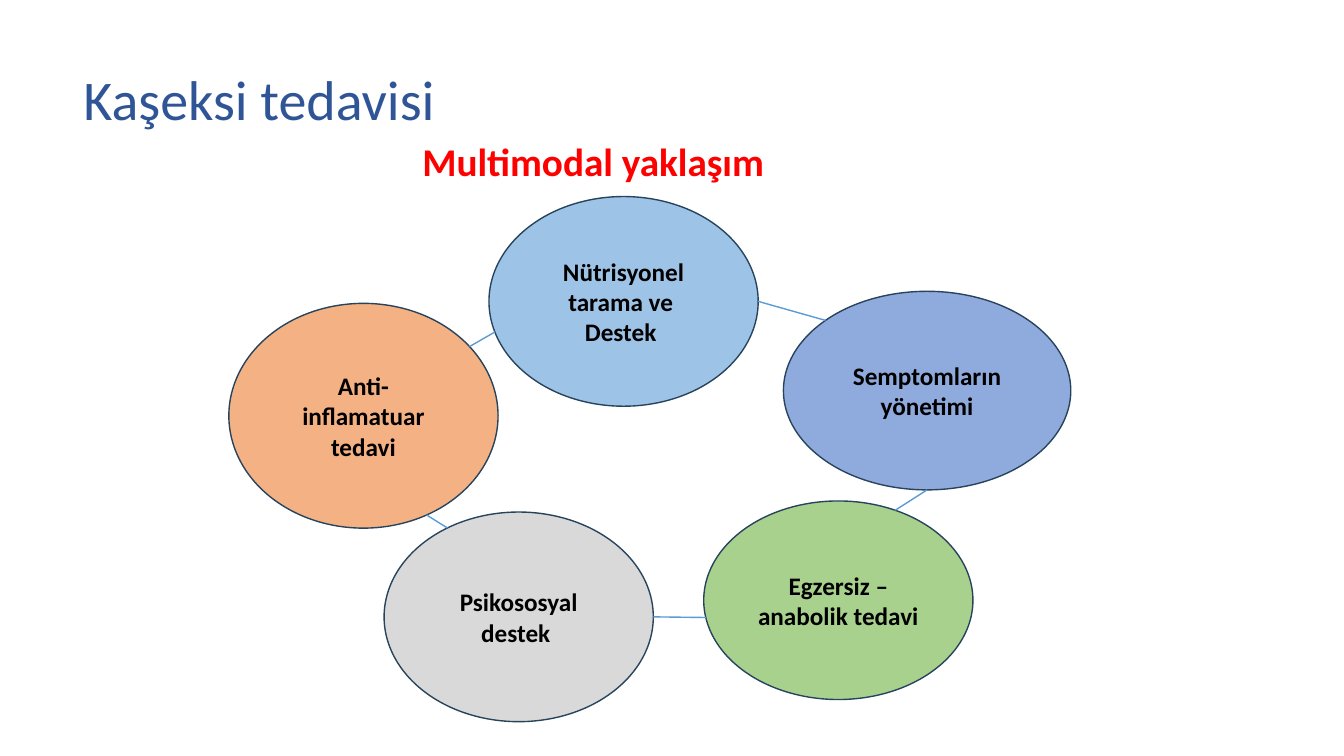
from dataclasses import dataclass
from math import cos, radians, sin

from lxml.etree import SubElement
from pptx import Presentation
from pptx.dml.color import RGBColor
from pptx.enum.shapes import MSO_CONNECTOR, MSO_SHAPE
from pptx.enum.text import MSO_ANCHOR, PP_ALIGN
from pptx.oxml.ns import qn
from pptx.util import Inches, Pt


@dataclass(frozen=True)
class Theme:
    """Colours and type sizes of the slide."""
    font: str = "Calibri"
    title: str = "2F5597"
    subtitle: str = "FF0000"
    ink: str = "000000"
    outline: str = "28445D"
    link: str = "5B9BD5"
    title_size: int = 40
    subtitle_size: int = 28
    label_size: int = 18
    line_width: int = 1


THEME = Theme()

THERAPIES = {
    "nutrition": ((4.85, 1.95, 2.67, 2.08), "9DC3E6", ["Nütrisyonel tarama ve ", "Destek "]),
    "inflammation": ((2.27, 3.01, 2.67, 2.23), "F4B183", ["Anti-inflamatuar tedavi"]),
    "exercise": ((6.98, 4.97, 2.67, 1.97), "A9D18E", ["Egzersiz –anabolik tedavi"]),
    "symptoms": ((7.77, 2.89, 2.85, 1.97), "8FAADC", ["Semptomların yönetimi"]),
    "psychosocial": ((3.81, 5.08, 2.67, 2.08), "D9D9D9", ["Psikososyal destek "]),
}

LINKS = [
    ("inflammation", -38, "nutrition", 163),
    ("nutrition", 0, "symptoms", 225),
    ("inflammation", 62, "psychosocial", 238),
    ("psychosocial", 0, "exercise", 170),
    ("exercise", -65, "symptoms", 90),
]


def write(frame, lines, size, color, bold=False, align=PP_ALIGN.LEFT):
    """Fill a text frame with one paragraph per line."""
    for index, line in enumerate(lines):
        para = frame.paragraphs[0] if index == 0 else frame.add_paragraph()
        para.text = line
        para.alignment = align
        para.font.name = THEME.font
        para.font.size = Pt(size)
        para.font.bold = bold
        para.font.color.rgb = RGBColor.from_string(color)


def add_heading(page, area, text, size, color, bold=False, wrap=True):
    """Place a heading in its area, centred vertically."""
    box = page.shapes.add_textbox(*map(Inches, area))
    frame = box.text_frame
    frame.word_wrap = wrap
    frame.vertical_anchor = MSO_ANCHOR.MIDDLE
    write(frame, [text], size, color, bold)
    frame.paragraphs[0].line_spacing = 0.9 if wrap else 1.0


def add_therapy(page, area, fill, lines):
    """Draw one labelled ellipse."""
    oval = page.shapes.add_shape(MSO_SHAPE.OVAL, *map(Inches, area))
    oval.shadow.inherit = False
    oval.fill.solid()
    oval.fill.fore_color.rgb = RGBColor.from_string(fill)
    oval.line.color.rgb = RGBColor.from_string(THEME.outline)
    oval.line.width = Pt(THEME.line_width)
    oval.text_frame.word_wrap = True
    oval.text_frame.vertical_anchor = MSO_ANCHOR.MIDDLE
    write(oval.text_frame, lines, THEME.label_size, THEME.ink, True, PP_ALIGN.CENTER)


def rim_point(area, angle):
    """Return the point of an ellipse at a clockwise angle from its right end."""
    left, top, width, height = area
    turn = radians(angle)
    return (Inches(left + width / 2 * (1 + cos(turn))),
            Inches(top + height / 2 * (1 + sin(turn))))


def add_link(page, start, end):
    """Draw a thin line between two points."""
    link = page.shapes.add_connector(MSO_CONNECTOR.STRAIGHT, *start, *end)
    link.line.color.rgb = RGBColor.from_string(THEME.link)
    link.line.width = Pt(THEME.line_width)
    SubElement(link._element.spPr, qn("a:effectLst"))


def add_cycle(page):
    """Draw the ring of therapies and the links between neighbours."""
    for area, fill, lines in THERAPIES.values():
        add_therapy(page, area, fill, lines)
    for source, source_angle, target, target_angle in LINKS:
        add_link(page, rim_point(THERAPIES[source][0], source_angle),
                 rim_point(THERAPIES[target][0], target_angle))


def add_title(page, area, text):
    """Fill the title placeholder and set its area."""
    title = page.shapes.title
    title.left, title.top, title.width, title.height = map(Inches, area)
    title.text_frame.vertical_anchor = MSO_ANCHOR.MIDDLE
    write(title.text_frame, [text], THEME.title_size, THEME.title)


def main():
    """Build and save the deck."""
    deck = Presentation()
    deck.slide_width, deck.slide_height = Inches(13.33), Inches(7.5)
    page = deck.slides.add_slide(deck.slide_layouts[6])
    add_heading(page, (0.73, 0.29, 11.5, 1.45), "Kaşeksi tedavisi",
                THEME.title_size, THEME.title)
    add_heading(page, (4.09, 1.31, 3.72, 0.57), "Multimodal yaklaşım",
                THEME.subtitle_size, THEME.subtitle, bold=True, wrap=False)
    add_cycle(page)
    deck.save("out.pptx")


if __name__ == "__main__":
    main()
